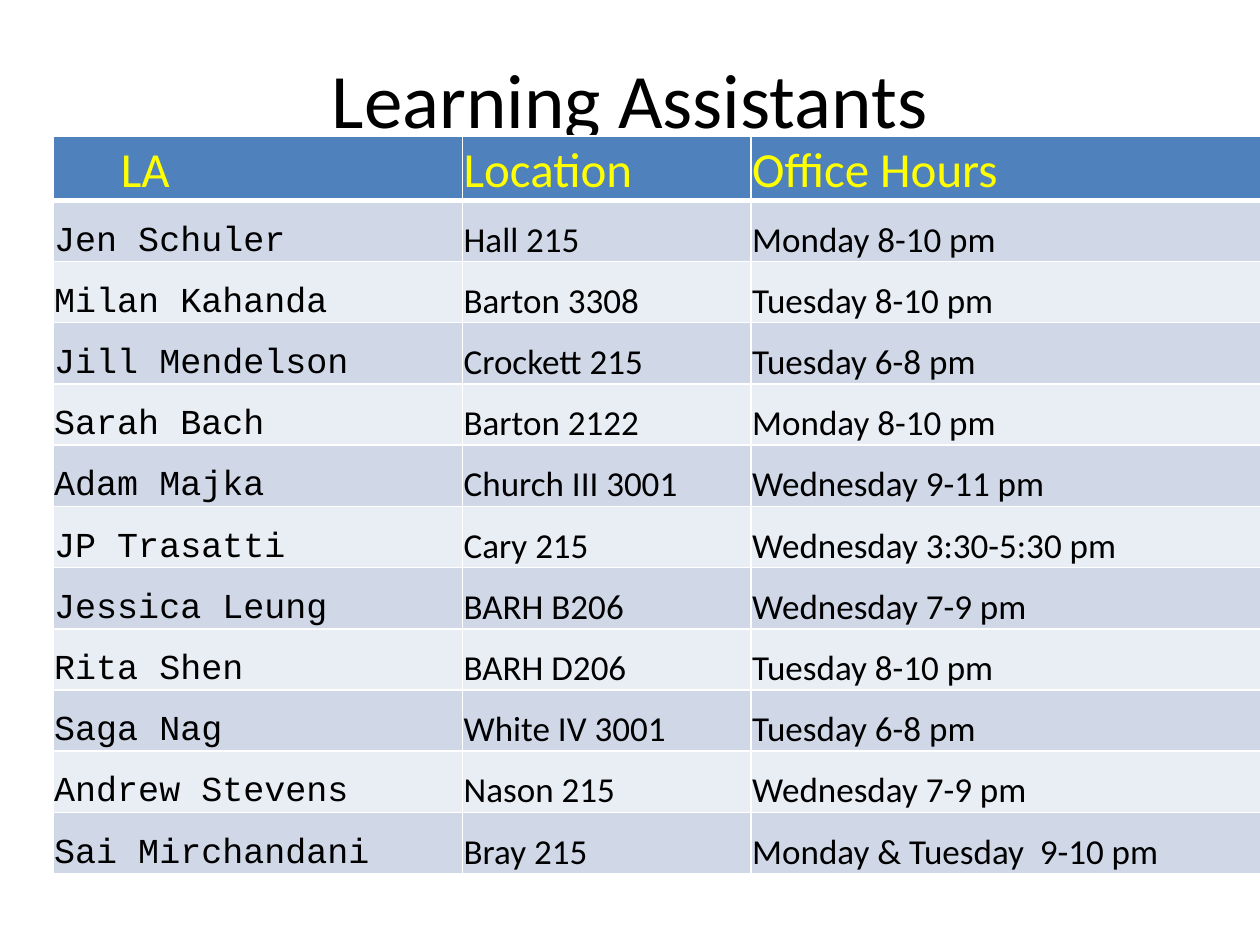
from lxml import etree
from pptx import Presentation
from pptx.dml.color import RGBColor
from pptx.enum.text import MSO_ANCHOR, PP_ALIGN
from pptx.oxml.ns import qn
from pptx.util import Inches, Pt

MIDDLE, BOTTOM = MSO_ANCHOR.MIDDLE, MSO_ANCHOR.BOTTOM
CENTER = PP_ALIGN.CENTER
TITLE_ONLY = 5

COLORS = {
    "text": "000000",
    "heading": "FFFF00",
    "header": "4F81BD",
    "odd": "D0D8E8",
    "even": "E9EDF4",
    "border": "FFFFFF",
}
BODY_FONT, NAME_FONT = "Calibri", "Courier New"

HEADINGS = ("LA", "Location", "Office Hours")
ASSISTANTS = [
    ("Jen Schuler", "Hall 215", "Monday 8-10 pm"),
    ("Milan Kahanda", "Barton 3308", "Tuesday 8-10 pm"),
    ("Jill Mendelson", "Crockett 215", "Tuesday 6-8 pm"),
    ("Sarah Bach", "Barton 2122", "Monday 8-10 pm"),
    ("Adam Majka", "Church III 3001", "Wednesday 9-11 pm"),
    ("JP Trasatti", "Cary 215", "Wednesday 3:30-5:30 pm"),
    ("Jessica Leung", "BARH B206", "Wednesday 7-9 pm"),
    ("Rita Shen", "BARH D206", "Tuesday 8-10 pm"),
    ("Saga Nag", "White IV 3001", "Tuesday 6-8 pm"),
    ("Andrew Stevens", "Nason 215", "Wednesday 7-9 pm"),
    ("Sai Mirchandani", "Bray 215", "Monday & Tuesday  9-10 pm"),
]
COLUMN_WIDTHS = (3.25, 2.29, 4.05)
HEADER_HEIGHT, ROW_HEIGHT = 0.51, 0.486
HEADING_INDENT = 0.54


class SlideBuilder:
    def __init__(self, slide):
        self.slide = slide

    def format_text(self, frame, size, font, color):
        for para in frame.paragraphs:
            for span in para.runs:
                span.font.size = Pt(size)
                span.font.name = font
                span.font.bold = False
                span.font.color.rgb = RGBColor.from_string(COLORS[color])

    def title(self, text, left, top, width, height):
        box = self.slide.shapes.title
        box.left, box.top = Inches(left), Inches(top)
        box.width, box.height = Inches(width), Inches(height)
        frame = box.text_frame
        frame.text = text
        frame.vertical_anchor = MIDDLE
        frame.paragraphs[0].alignment = CENTER
        self.format_text(frame, 44, BODY_FONT, "text")

    def borders(self, cell, **widths):
        properties = cell._tc.get_or_add_tcPr()
        for side in "LRTB":
            line = etree.SubElement(properties, qn(f"a:ln{side}"),
                                    w=str(Pt(widths.get(side, 1))))
            fill = etree.SubElement(line, qn("a:solidFill"))
            etree.SubElement(fill, qn("a:srgbClr"), val=COLORS["border"])

    def cell(self, cell, text, fill, size, font, color, indent=0.01):
        cell.text_frame.text = text
        cell.vertical_anchor = BOTTOM
        cell.margin_left = Inches(indent)
        cell.margin_right = cell.margin_top = Inches(0.01)
        cell.margin_bottom = 0
        cell.fill.solid()
        cell.fill.fore_color.rgb = RGBColor.from_string(COLORS[fill])
        self.format_text(cell.text_frame, size, font, color)

    def table(self, left, top, headings, rows):
        height = HEADER_HEIGHT + ROW_HEIGHT * len(rows)
        table = self.slide.shapes.add_table(
            len(rows) + 1, len(headings), Inches(left), Inches(top),
            Inches(sum(COLUMN_WIDTHS)), Inches(height)).table
        for column, width in zip(table.columns, COLUMN_WIDTHS):
            column.width = Inches(width)
        for row in table.rows:
            row.height = Inches(ROW_HEIGHT)
        table.rows[0].height = Inches(HEADER_HEIGHT)

        # Header row, with a thick rule below it
        for index, heading in enumerate(headings):
            cell = table.cell(0, index)
            self.borders(cell, B=3)
            self.cell(cell, heading, "header", 28, BODY_FONT, "heading",
                      0.01 if index else HEADING_INDENT)

        # Banded body rows, names in a fixed-width font
        for number, values in enumerate(rows, start=1):
            for index, value in enumerate(values):
                cell = table.cell(number, index)
                self.borders(cell, T=3 if number == 1 else 1)
                self.cell(cell, value, "odd" if number % 2 else "even", 20,
                          BODY_FONT if index else NAME_FONT, "text")


def main():
    deck = Presentation()
    deck.slide_width, deck.slide_height = Inches(10), Inches(7.5)
    page = SlideBuilder(deck.slides.add_slide(deck.slide_layouts[TITLE_ONLY]))
    page.title("Learning Assistants", 0.5, 0.3, 9, 0.95)
    page.table(0.42, 1.08, HEADINGS, ASSISTANTS)
    deck.save("out.pptx")


if __name__ == "__main__":
    main()
